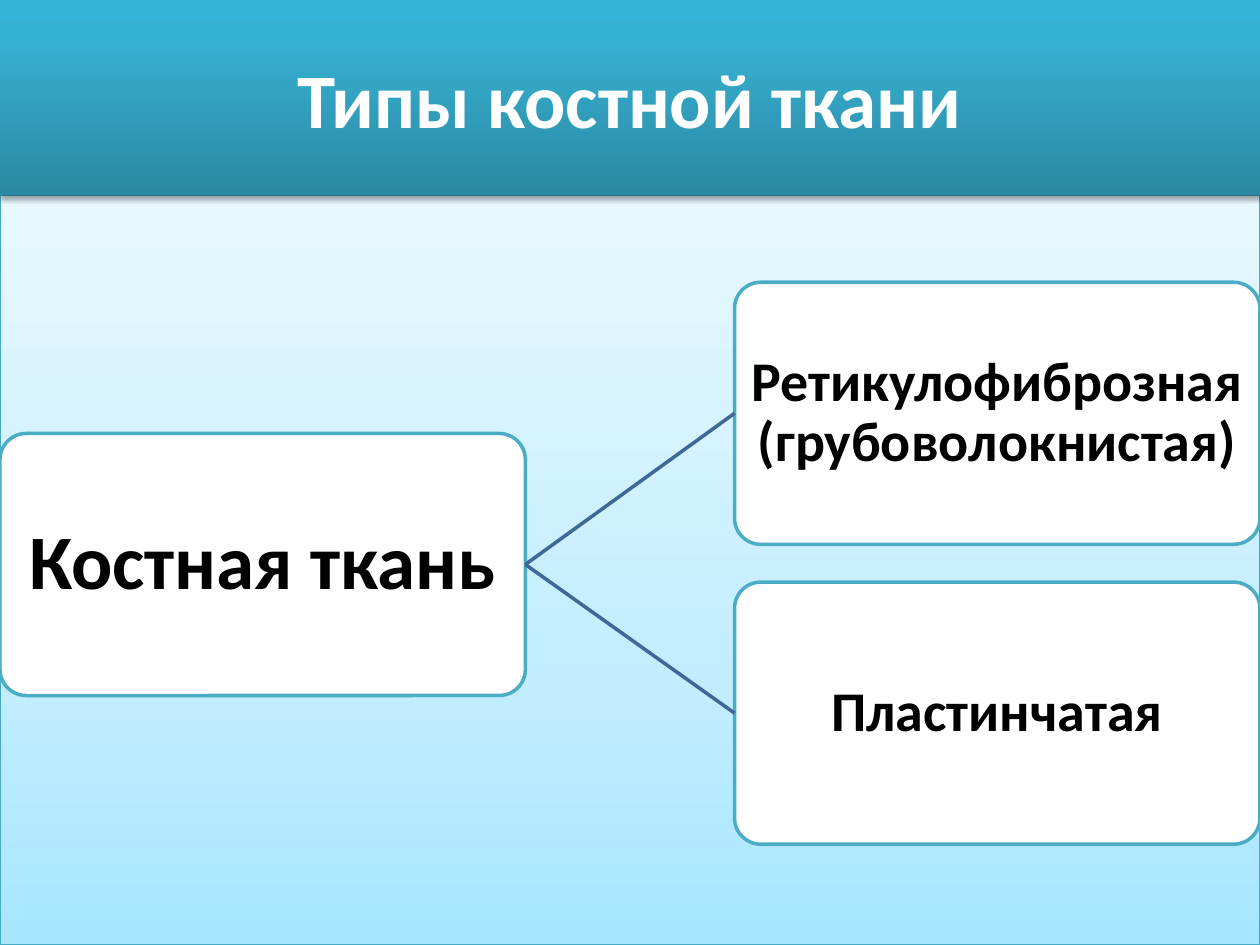
from copy import deepcopy

from lxml import etree
from pptx import Presentation
from pptx.dml.color import RGBColor
from pptx.enum import shapes, text
from pptx.oxml.ns import qn
from pptx.util import Inches, Pt

WHITE = RGBColor(0xFF, 0xFF, 0xFF)
BLACK = RGBColor(0x00, 0x00, 0x00)
PANEL_LINE = RGBColor(0x46, 0xAA, 0xC5)
BOX_LINE = RGBColor(0x4B, 0xAC, 0xC6)
BRANCH_LINE = RGBColor(0x3F, 0x67, 0x97)
PANEL_STOPS = [
    (0, RGBColor(0xA7, 0xE6, 0xFF)),
    (0.35, RGBColor(0xC1, 0xED, 0xFF)),
    (1, RGBColor(0xE7, 0xF8, 0xFF)),
]
HEADER_STOPS = [
    (0, RGBColor(0x2A, 0x88, 0xA2)),
    (0.8, RGBColor(0x37, 0xB1, 0xD2)),
    (1, RGBColor(0x34, 0xB4, 0xD6)),
]

SLIDE_WIDTH, SLIDE_HEIGHT, HEADER_HEIGHT = 10, 7.5, 1.55
BOX_WIDTH, BOX_HEIGHT = 4.17, 2.08
RIGHT_COLUMN = SLIDE_WIDTH - BOX_WIDTH


def add_band(top, height, stops, shadow_alpha, shadow_distance):
    """Add a full-width rectangle with an upward gradient and a soft shadow."""
    band = slide.shapes.add_shape(
        shapes.MSO_SHAPE.RECTANGLE, 0, Inches(top), Inches(SLIDE_WIDTH), Inches(height)
    )
    band.fill.gradient()
    band.fill.gradient_angle = 90
    stop_list = band._element.spPr.find(".//" + qn("a:gsLst"))
    stop_list.append(deepcopy(stop_list[-1]))
    for stop, (position, color) in zip(band.fill.gradient_stops, stops):
        stop.position = position
        stop.color.rgb = color

    band.shadow.inherit = False
    effects = band._element.spPr.find(qn("a:effectLst"))
    shadow = etree.SubElement(
        effects, qn("a:outerShdw"), blurRad=str(Pt(3.1)), dist=str(Pt(shadow_distance)),
        dir="5400000", rotWithShape="0",
    )
    shadow_color = etree.SubElement(shadow, qn("a:srgbClr"), val="000000")
    etree.SubElement(shadow_color, qn("a:alpha"), val=str(shadow_alpha * 1000))
    return band


def write_centered(shape, wording, size, color):
    frame = shape.text_frame
    frame.text = wording
    frame.word_wrap = True
    frame.vertical_anchor = text.MSO_ANCHOR.MIDDLE
    paragraph = frame.paragraphs[0]
    paragraph.alignment = text.PP_ALIGN.CENTER
    font = paragraph.runs[0].font
    font.name = "Calibri"
    font.size = Pt(size)
    font.bold = True
    font.color.rgb = color


presentation = Presentation()
presentation.slide_width = Inches(SLIDE_WIDTH)
presentation.slide_height = Inches(SLIDE_HEIGHT)
slide = presentation.slides.add_slide(presentation.slide_layouts[6])

panel = add_band(HEADER_HEIGHT, SLIDE_HEIGHT - HEADER_HEIGHT, PANEL_STOPS, 38, 1.6)
panel.line.color.rgb = PANEL_LINE
panel.line.width = Pt(0.75)

header = add_band(0, HEADER_HEIGHT, HEADER_STOPS, 35, 1.8)
header.line.fill.background()
write_centered(header, "Типы костной ткани", 44, WHITE)

boxes = []
for left, top, wording, size, inset in [
    (0, 3.44, "Костная ткань", 44, 0.03),
    (RIGHT_COLUMN, 2.24, "Ретикулофиброзная (грубоволокнистая)", 32, 0.02),
    (RIGHT_COLUMN, 4.62, "Пластинчатая", 32, 0.02),
]:
    box = slide.shapes.add_shape(
        shapes.MSO_SHAPE.ROUNDED_RECTANGLE,
        Inches(left), Inches(top), Inches(BOX_WIDTH), Inches(BOX_HEIGHT),
    )
    box.adjustments[0] = 0.1
    box.shadow.inherit = False
    box.fill.solid()
    box.fill.fore_color.rgb = WHITE
    box.line.color.rgb = BOX_LINE
    box.line.width = Pt(2)
    write_centered(box, wording, size, BLACK)
    frame = box.text_frame
    frame.margin_left = frame.margin_right = Inches(inset)
    frame.margin_top = frame.margin_bottom = Inches(inset)
    frame.paragraphs[0].line_spacing = 0.9
    boxes.append(box)

tissue, *types = boxes
for tissue_type in types:
    branch = slide.shapes.add_connector(shapes.MSO_CONNECTOR.STRAIGHT, 0, 0, 0, 0)
    branch.begin_connect(tissue, 3)
    branch.end_connect(tissue_type, 1)
    branch.line.color.rgb = BRANCH_LINE
    branch.line.width = Pt(2)
    etree.SubElement(branch._element.spPr, qn("a:effectLst"))

presentation.save("out.pptx")
